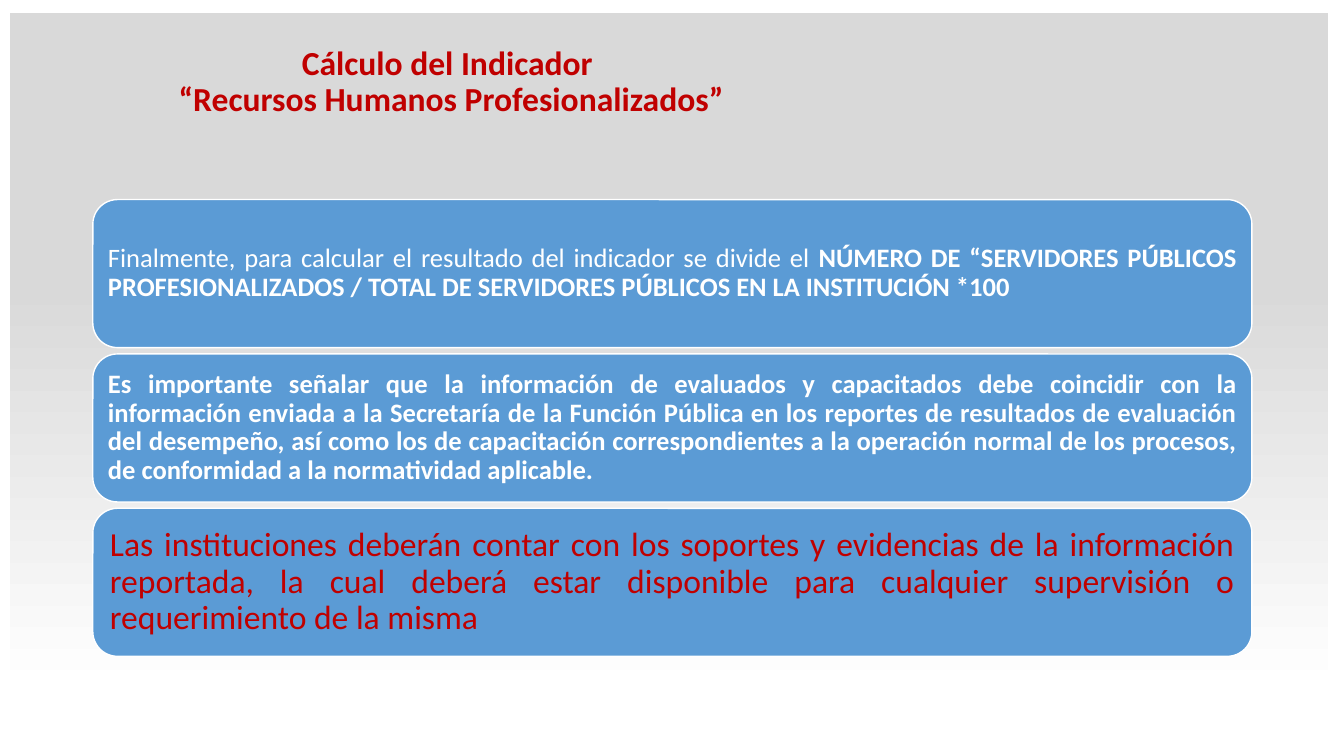
from pptx import Presentation
from pptx import util as u
from pptx.dml.color import RGBColor
from pptx.enum import shapes, text

WHITE, RED, BLUE, GREY = "FFFFFF", "C00000", "5B9BD5", "D9D9D9"


def tint(color, code):
    color.rgb = RGBColor.from_string(code)


def write(shape, runs, size, code, align, pad):
    frame = shape.text_frame
    look = {"word_wrap": True, "margin_left": pad, "margin_right": pad,
            "margin_top": pad, "margin_bottom": pad}
    for name, value in look.items():
        setattr(frame, name, value)
    para = frame.paragraphs[0]
    para.alignment, para.line_spacing = align, 0.9
    for words, bold in runs:
        # A line break splits the words into two runs
        for i, line in enumerate(words.split("\n")):
            if i:
                para.add_line_break()
            run = para.add_run()
            run.text = line
            for name, value in {"name": "Calibri", "size": u.Pt(size), "bold": bold}.items():
                setattr(run.font, name, value)
            tint(run.font.color, code)


deck = Presentation()
deck.slide_width, deck.slide_height = u.Cm(33.87), u.Cm(19.05)
slide = deck.slides.add_slide(deck.slide_layouts[6])
kind = shapes.MSO_SHAPE

# Backdrop fading from grey to white
back = slide.shapes.add_shape(kind.RECTANGLE, u.Cm(0.25), u.Cm(0.33), u.Cm(33.22), u.Cm(18.39))
back.shadow.inherit = False
back.line.fill.background()
back.fill.gradient()
back.fill.gradient_angle = 270
for stop, (place, code) in zip(back.fill.gradient_stops, [(0.37, GREY), (0.93, WHITE)]):
    stop.position = place
    tint(stop.color, code)

# Stacked cards
cards = [
    (19, WHITE, 0.2, [
        ("Finalmente, para calcular el resultado del indicador se divide el ", False),
        ("NÚMERO DE “SERVIDORES PÚBLICOS PROFESIONALIZADOS / TOTAL DE SERVIDORES "
         "PÚBLICOS EN LA INSTITUCIÓN *100", True)]),
    (19, WHITE, 0.2, [
        ("Es importante señalar que la información de evaluados y capacitados debe coincidir "
         "con la información enviada a la Secretaría de la Función Pública en los reportes de "
         "resultados de evaluación del desempeño, así como los de capacitación "
         "correspondientes a la operación normal de los procesos, de conformidad a la "
         "normatividad aplicable.", True)]),
    (24, RED, 0.25, [
        ("Las instituciones deberán contar con los soportes y evidencias de la información "
         "reportada, la cual deberá estar disponible para cualquier supervisión o "
         "requerimiento de la misma", False)]),
]
for row, (size, code, pad, runs) in enumerate(cards):
    card = slide.shapes.add_shape(kind.ROUNDED_RECTANGLE, u.Cm(2.34), u.Cm(5.03 + 3.89 * row),
                                  u.Cm(29.21), u.Cm(3.73))
    card.shadow.inherit = False
    card.fill.solid()
    tint(card.fill.fore_color, BLUE)
    tint(card.line.color, WHITE)
    card.line.width = u.Pt(1)
    card.text_frame.vertical_anchor = text.MSO_ANCHOR.MIDDLE
    write(card, runs, size, code, text.PP_ALIGN.JUSTIFY, u.Cm(pad))

# Title
title = slide.shapes.add_textbox(u.Cm(2.44), u.Cm(1.04), u.Cm(17.86), u.Cm(2.11))
write(title, [("Cálculo del Indicador \n“Recursos Humanos Profesionalizados”", True)],
      24, RED, text.PP_ALIGN.CENTER, u.Cm(0.13))

deck.save("out.pptx")
